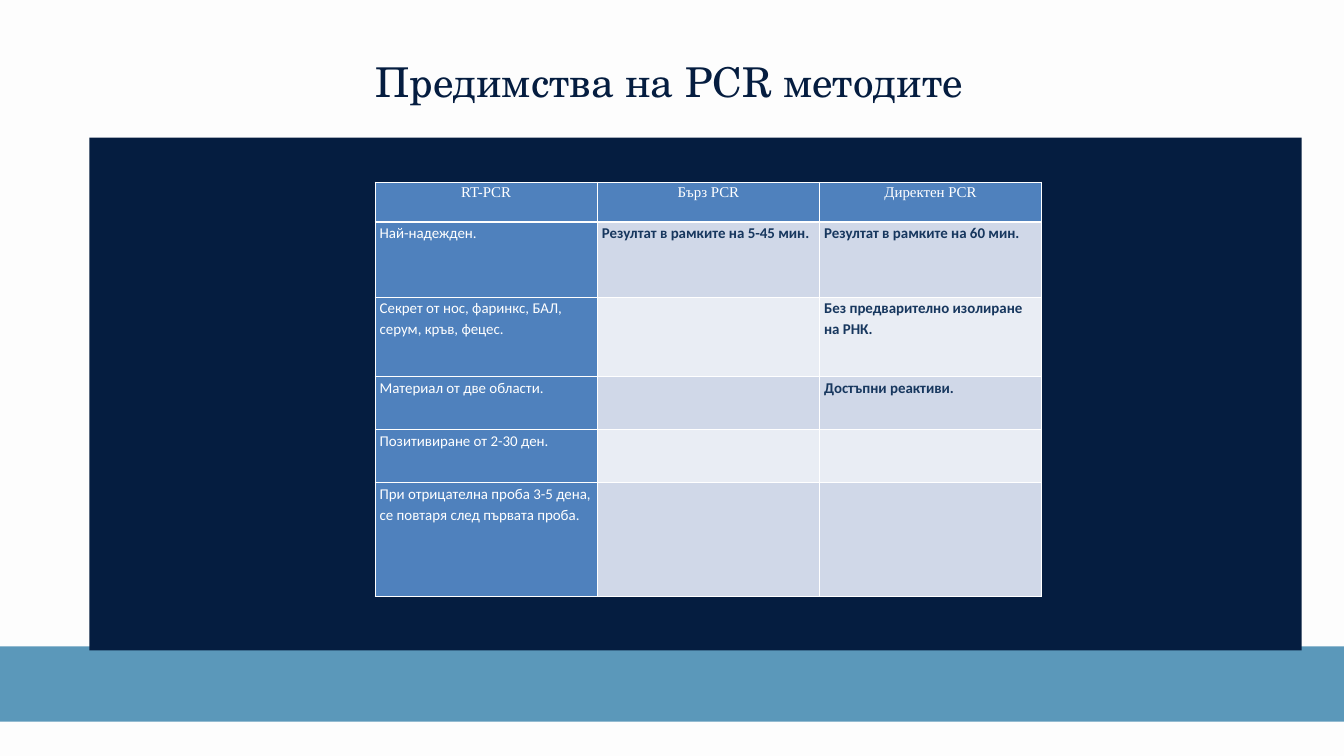
from lxml import etree
from pptx import Presentation
from pptx import util as u
from pptx.dml import color
from pptx.enum import shapes, text
from pptx.oxml import ns

Pt = u.Pt
THEME = {
    "page": "FDFDFD", "band": "5B98BA", "navy": "051D40",
    "head": "4F81BD", "odd": "D0D8E8", "even": "E9EDF4",
    "white": "FFFFFF", "ink": "17375E",
    "title": 44, "body": 16,
}


def rgb(name):
    return color.RGBColor.from_string(THEME[name])


def style(font, tone, **form):
    for key, val in form.items():
        setattr(font, key, val)
    font.color.rgb = rgb(tone)


deck = Presentation()
deck.slide_width, deck.slide_height = Pt(1440), Pt(810)
slide = deck.slides.add_slide(deck.slide_layouts[5])
slide.background.fill.solid()
slide.background.fill.fore_color.rgb = rgb("page")

# Bottom band and dark panel
for tone, box in (("band", (0, 692.6, 1440, 80.6)),
                  ("navy", (95.8, 147.6, 1298.9, 549.4))):
    rect = slide.shapes.add_shape(shapes.MSO_SHAPE.RECTANGLE, *map(Pt, box))
    rect.shadow.inherit = False
    rect.fill.solid()
    rect.fill.fore_color.rgb = rgb(tone)
    rect.line.fill.background()

# Title, in front of the panel
title = slide.shapes.title
slide.shapes.element.append(title.element)
for key, val in {"left": 185.8, "top": 31.7, "width": 1063.4, "height": 159.1}.items():
    setattr(title, key, Pt(val))
frame = title.text_frame
frame.text = "Предимства на PCR методите"
for key, val in {"margin_left": 0, "margin_top": 0, "margin_right": 0,
                 "margin_bottom": 0, "word_wrap": True,
                 "auto_size": text.MSO_AUTO_SIZE.NONE,
                 "vertical_anchor": text.MSO_ANCHOR.TOP}.items():
    setattr(frame, key, val)
para = frame.paragraphs[0]
para.alignment = text.PP_ALIGN.CENTER
para.line_spacing = Pt(82)
style(para.font, "navy", name="TeX Gyre Schola", size=Pt(THEME["title"]))

# Table of advantages
ROWS = [
    (42.5, "RT-PCR", "Бърз PCR", "Директен PCR"),
    (80.6, "Най-надежден.", "Резултат в рамките на 5-45 мин.",
     "Резултат в рамките на 60 мин."),
    (85, "Секрет от нос, фаринкс, БАЛ, серум, кръв, фецес.", "",
     "Без предварително изолиране на РНК."),
    (56.9, "Материал от две области.", "", "Достъпни реактиви."),
    (56.9, "Позитивиране от 2-30 ден.", "", ""),
    (122.4, "При отрицателна проба 3-5 дена, се повтаря след първата проба.", "", ""),
]
table = slide.shapes.add_table(len(ROWS), 3, Pt(401.8), Pt(195.1), Pt(714.3),
                               Pt(sum(row[0] for row in ROWS))).table
for col in table.columns:
    col.width = Pt(238.1)

for r, (tall, *words) in enumerate(ROWS):
    table.rows[r].height = Pt(tall)
    for c, word in enumerate(words):
        cell = table.cell(r, c)
        blue = r == 0 or c == 0
        cell.fill.solid()
        cell.fill.fore_color.rgb = rgb("head" if blue else "odd" if r % 2 else "even")
        for key, val in {"margin_left": 5, "margin_right": 5,
                         "margin_top": 0, "margin_bottom": 0}.items():
            setattr(cell, key, Pt(val))
        cell.text = word
        para = cell.text_frame.paragraphs[0]
        para.line_spacing = 1.15
        para.alignment = text.PP_ALIGN.LEFT if r else text.PP_ALIGN.CENTER
        style(para.font, "white" if blue else "ink", bold=not blue,
              name="Calibri" if r else "Times New Roman", size=Pt(THEME["body"]))

        # White borders, heavier below the header
        props = cell._tc.get_or_add_tcPr()
        for i, side in enumerate(("lnL", "lnR", "lnT", "lnB")):
            heavy = (r == 0 and side == "lnB") or (r == 1 and side == "lnT")
            line = etree.Element(ns.qn("a:" + side), w=str(Pt(3 if heavy else 1)))
            fill = etree.SubElement(line, ns.qn("a:solidFill"))
            etree.SubElement(fill, ns.qn("a:srgbClr"), val=THEME["white"])
            props.insert(i, line)

deck.save("out.pptx")
